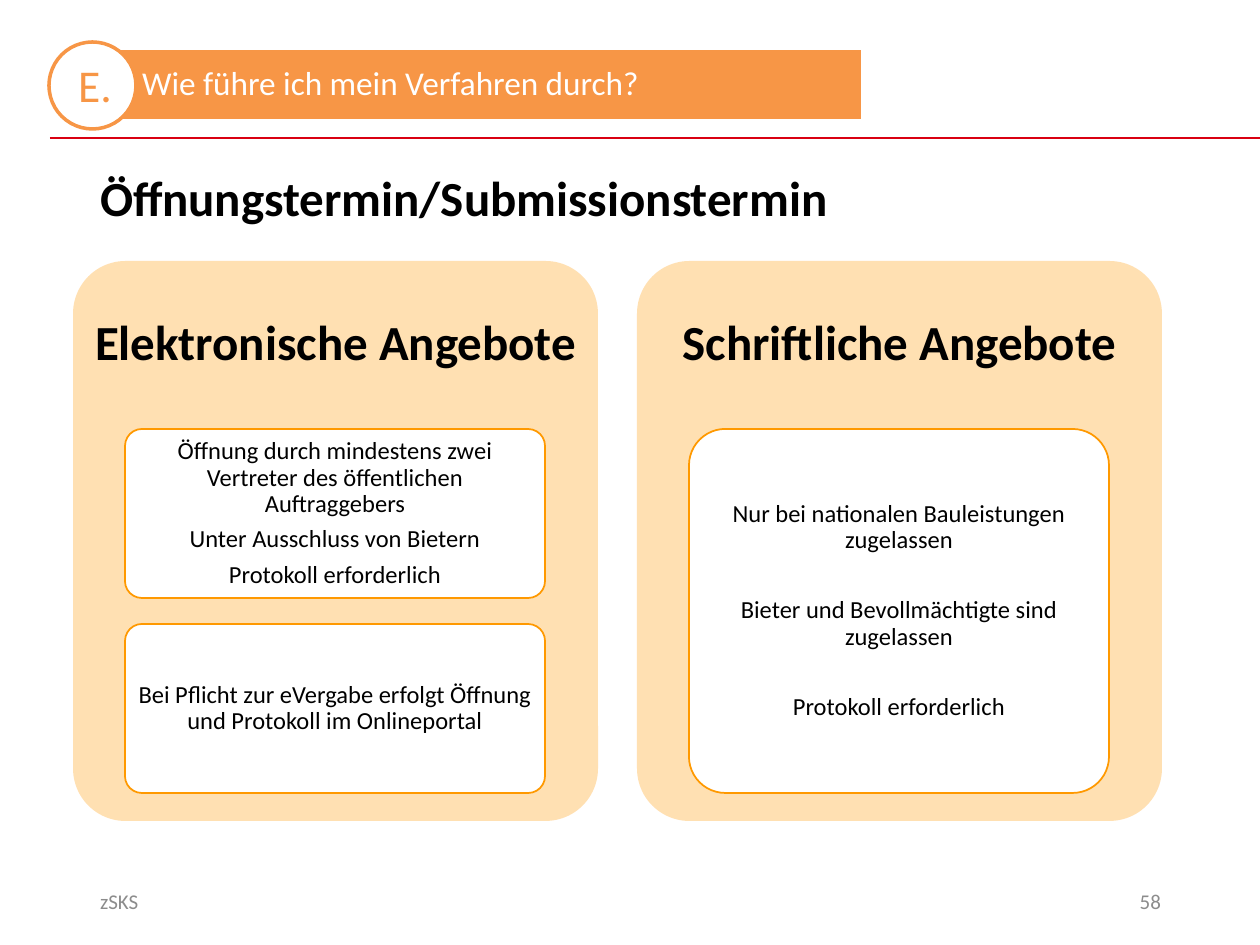
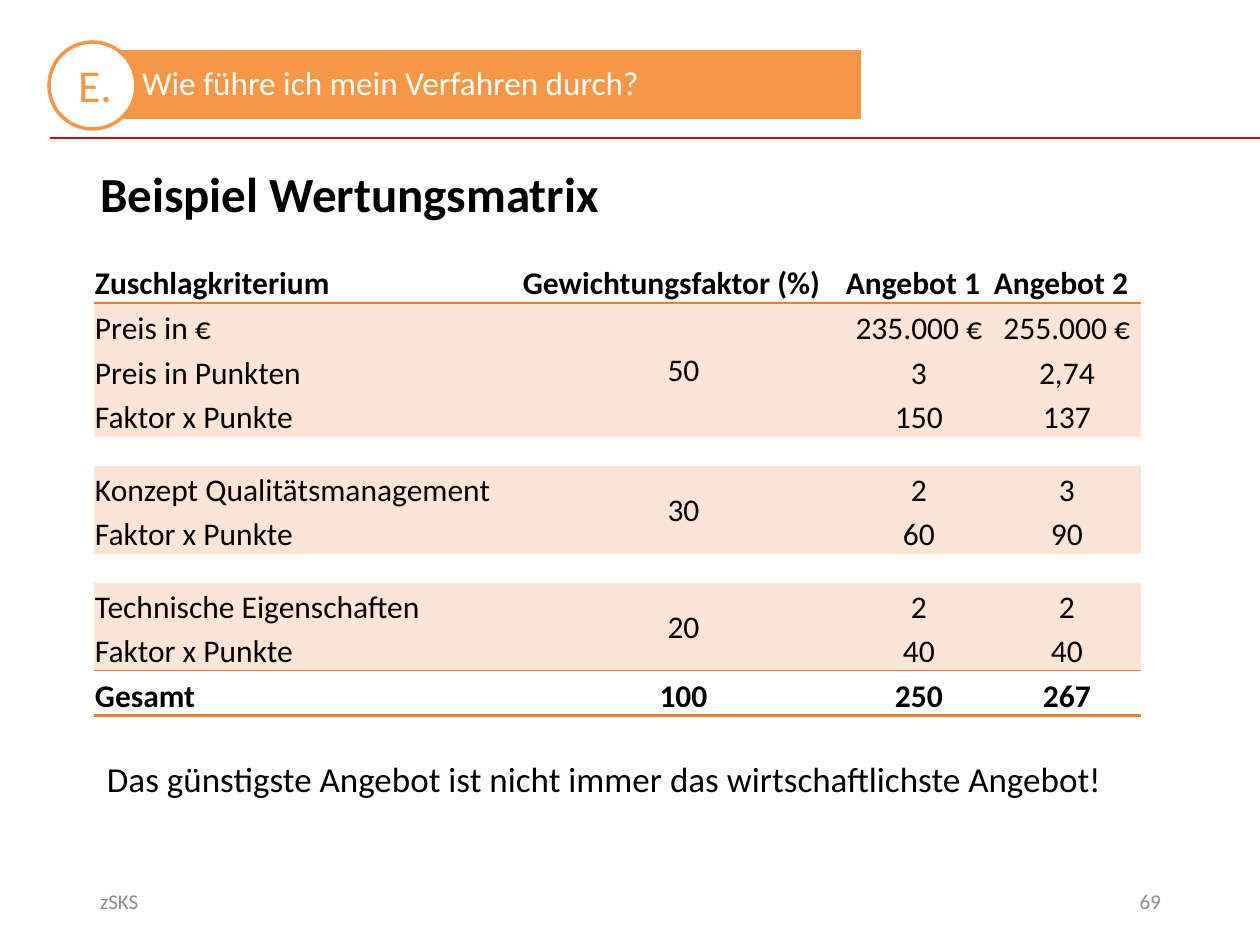
import dataclasses

import pptx
import pptx.dml.color
import pptx.enum.shapes
import pptx.enum.text
import pptx.oxml.ns
import pptx.util
from lxml import etree

ALIGN = pptx.enum.text.PP_ALIGN
ANCHOR = pptx.enum.text.MSO_ANCHOR
SHAPE = pptx.enum.shapes.MSO_SHAPE
qn = pptx.oxml.ns.qn
PX_PER_INCH = 126
NO_GRID_STYLE = "{2D5ABB26-0587-4C30-8999-92F81FD0307C}"


@dataclasses.dataclass(frozen=True)
class Theme:
    font: str = "Calibri"
    text: str = "000000"
    white: str = "FFFFFF"
    muted: str = "8C8C8C"
    band: str = "F79646"
    rule: str = "D90011"
    card: str = "FF9900"
    table_fill: str = "FCE4D6"
    table_line: str = "ED7D31"
    badge_size: int = 26
    band_size: int = 19
    title_size: int = 28
    note_size: int = 20
    table_size: int = 18
    spacer_size: int = 10
    box_size: int = 14
    footer_size: int = 12


T = Theme()


# Shared helpers
def px(n):
    return round(n * 914400 / PX_PER_INCH)


def rgb(colour):
    return pptx.dml.color.RGBColor.from_string(colour)


def format_paragraph(p, size, colour=T.text, bold=False, align=ALIGN.LEFT):
    p.alignment = align
    p.font.name = T.font
    p.font.size = pptx.util.Pt(size)
    p.font.bold = bold
    p.font.color.rgb = rgb(colour)


def write(sp, lines, size, colour=T.text, bold=False, align=ALIGN.LEFT,
          anchor=ANCHOR.TOP, insets=(13, 6, 13, 6), spacing=None, gap=0):
    tf = sp.text_frame
    tf.word_wrap = True
    tf.auto_size = pptx.enum.text.MSO_AUTO_SIZE.NONE
    tf.vertical_anchor = anchor
    tf.margin_left, tf.margin_top, tf.margin_right, tf.margin_bottom = map(px, insets)
    for i, line in enumerate(lines):
        p = tf.add_paragraph() if i else tf.paragraphs[0]
        p.text = line
        p.line_spacing = spacing
        if i < len(lines) - 1:
            p.space_after = pptx.util.Pt(gap)
        format_paragraph(p, size, colour, bold, align)


def add_text(slide, box, text, size, **style):
    sp = slide.shapes.add_textbox(*map(px, box))
    write(sp, [text], size, **style)


def add_box(slide, kind, box, fill, line=None, width=1):
    sp = slide.shapes.add_shape(kind, *map(px, box))
    sp.shadow.inherit = False
    sp.fill.solid()
    sp.fill.fore_color.rgb = rgb(fill)
    if line:
        sp.line.color.rgb = rgb(line)
        sp.line.width = pptx.util.Pt(width)
    else:
        sp.line.fill.background()
    if kind == SHAPE.ROUNDED_RECTANGLE:
        sp.adjustments[0] = 0.1
    return sp


# Frame of every slide: rule, band, badge, title, footer
def add_header(slide, x, y):
    rule = slide.shapes.add_connector(
        pptx.enum.shapes.MSO_CONNECTOR.STRAIGHT,
        px(x + 1), px(y + 96), px(1260), px(y + 96))
    rule.line.color.rgb = rgb(T.rule)
    rule.line.width = pptx.util.Pt(1)
    etree.SubElement(rule._element.spPr, qn("a:effectLst"))

    band = add_box(slide, SHAPE.RECTANGLE, (x + 38, y + 8, 774, 69), T.band)
    write(band, ["Wie führe ich mein Verfahren durch?"], T.band_size, T.white,
          anchor=ANCHOR.MIDDLE, insets=(55, 6, 6, 6), spacing=0.9)
    badge = add_box(slide, SHAPE.OVAL, (x, y, 87, 87), T.white, T.band, 2)
    write(badge, ["E."], T.badge_size, T.band, align=ALIGN.CENTER,
          anchor=ANCHOR.MIDDLE, insets=(5, 0, 0, 2))


def add_footer(slide, y, number):
    style = dict(colour=T.muted, anchor=ANCHOR.MIDDLE)
    add_text(slide, (87, y, 284, 50), "zSKS", T.footer_size, **style)
    add_text(slide, (890, y, 284, 50), number, T.footer_size, align=ALIGN.RIGHT, **style)


def add_slide(prs, title, title_y, number):
    slide = prs.slides.add_slide(prs.slide_layouts[5])
    add_header(slide, 49, 42)
    sp = slide.shapes.title
    sp.left, sp.top, sp.width, sp.height = map(px, (87, title_y, 1076, 72))
    write(sp, [title], T.title_size, bold=True)
    add_footer(slide, 876, number)
    return slide


# Card with a heading and white boxes of equal height
def add_card(slide, box, heading, boxes, gap):
    x, y, w, h = box
    card = add_box(slide, SHAPE.ROUNDED_RECTANGLE, box, T.card)
    colour = card._element.spPr.find(qn("a:solidFill"))[0]
    etree.SubElement(colour, qn("a:alpha"), val="30000")
    add_text(slide, (x, y, w, 168), heading, T.title_size, bold=True,
             align=ALIGN.CENTER, anchor=ANCHOR.MIDDLE, insets=(15, 15, 15, 15), spacing=0.9)

    between = 26
    box_h = (364 - between * (len(boxes) - 1)) // len(boxes)
    for i, lines in enumerate(boxes):
        place = (x + 52, y + 168 + i * (box_h + between), w - 105, box_h)
        sp = add_box(slide, SHAPE.ROUNDED_RECTANGLE, place, T.white, T.card)
        write(sp, lines, T.box_size, align=ALIGN.CENTER, anchor=ANCHOR.MIDDLE,
              insets=(5, 4, 5, 4), spacing=0.9, gap=gap)


def build_opening(prs):
    slide = add_slide(prs, "Öffnungstermin/Submissionstermin", 161, "58")
    cards = [
        ("Elektronische Angebote", 5, [
            ["Öffnung durch mindestens zwei Vertreter des öffentlichen Auftraggebers",
             "Unter Ausschluss von Bietern",
             "Protokoll erforderlich"],
            ["Bei Pflicht zur eVergabe erfolgt Öffnung und Protokoll im Onlineportal"],
        ]),
        ("Schriftliche Angebote", 25, [
            ["Nur bei nationalen Bauleistungen zugelassen",
             "Bieter und Bevollmächtigte sind zugelassen",
             "Protokoll erforderlich"],
        ]),
    ]
    for i, (heading, gap, boxes) in enumerate(cards):
        add_card(slide, (73 + i * 564, 261, 525, 560), heading, boxes, gap)


# Scoring table
def add_border(cell, side, width):
    ln = etree.Element(qn("a:" + side))
    if width:
        ln.set("w", str(pptx.util.Pt(width)))
        fill = etree.SubElement(ln, qn("a:solidFill"))
        etree.SubElement(fill, qn("a:srgbClr"), val=T.table_line)
    else:
        etree.SubElement(ln, qn("a:noFill"))
    cell._tc.get_or_add_tcPr().insert(0, ln)


def format_cell(cell, text, filled, bold, align, anchor):
    cell.margin_left = cell.margin_right = cell.margin_top = px(1)
    cell.margin_bottom = 0
    cell.vertical_anchor = anchor
    if filled:
        cell.fill.solid()
        cell.fill.fore_color.rgb = rgb(T.table_fill)
    else:
        cell.fill.background()
    p = cell.text_frame.paragraphs[0]
    if text:
        p.text = text
        format_paragraph(p, T.table_size, bold=bold, align=align)
    else:
        size = str(T.spacer_size * 100)
        etree.SubElement(p._p, qn("a:endParaRPr"), sz=size)


def add_scores(slide, x, y, rows, widths, merges, rules):
    last = len(rows) - 1
    heights = [29 if not any(row) else 45 if r in (0, 1, 2, last) else 44
               for r, row in enumerate(rows)]
    frame = slide.shapes.add_table(len(rows), len(widths), *map(
        px, (x, y, sum(widths), sum(heights))))
    table = frame.table
    table.first_row = table.horz_banding = False
    table._tbl.tblPr.find(qn("a:tableStyleId")).text = NO_GRID_STYLE
    for column, width in zip(table.columns, widths):
        column.width = px(width)
    for r, row in enumerate(rows):
        table.rows[r].height = px(heights[r])
        for c, text in enumerate(row):
            cell = table.cell(r, c)
            edge_row = r in (0, last)
            format_cell(cell, text, any(row) and not edge_row, edge_row,
                        ALIGN.CENTER if r and c else ALIGN.LEFT,
                        ANCHOR.MIDDLE if c == 1 and not edge_row else ANCHOR.BOTTOM)
            # A merged cell takes the rule below its final row
            bottom = merges.get(r, r) if c == 1 else r
            add_border(cell, "lnB", rules.get(bottom))
            add_border(cell, "lnT", rules.get(r - 1))
    for first, final in merges.items():
        table.cell(first, 1).merge(table.cell(final, 1))


def build_matrix(prs):
    slide = add_slide(prs, "Beispiel Wertungsmatrix", 157, "69")
    add_text(slide, (94, 751, 1061, 55),
             "Das günstigste Angebot ist nicht immer das wirtschaftlichste Angebot!",
             T.note_size)
    spacer = ("",) * 4
    rows = [
        ("Zuschlagkriterium", "Gewichtungsfaktor (%)", "Angebot 1", "Angebot 2"),
        ("Preis in €", "50", "235.000 €", "255.000 €"),
        ("Preis in Punkten", "", "3", "2,74"),
        ("Faktor x Punkte", "", "150", "137"),
        spacer,
        ("Konzept Qualitätsmanagement", "30", "2", "3"),
        ("Faktor x Punkte", "", "60", "90"),
        spacer,
        ("Technische Eigenschaften", "20", "2", "2"),
        ("Faktor x Punkte", "", "40", "40"),
        ("Gesamt", "100", "250", "267"),
    ]
    add_scores(slide, 94, 258, rows, widths=(428, 323, 148, 148),
               merges={1: 3, 5: 6, 8: 9}, rules={0: 1.5, 9: 0.5, 10: 2})


def main():
    prs = pptx.Presentation()
    prs.slide_width, prs.slide_height = px(1260), px(945)
    build_opening(prs)
    build_matrix(prs)
    prs.save("out.pptx")


if __name__ == "__main__":
    main()
